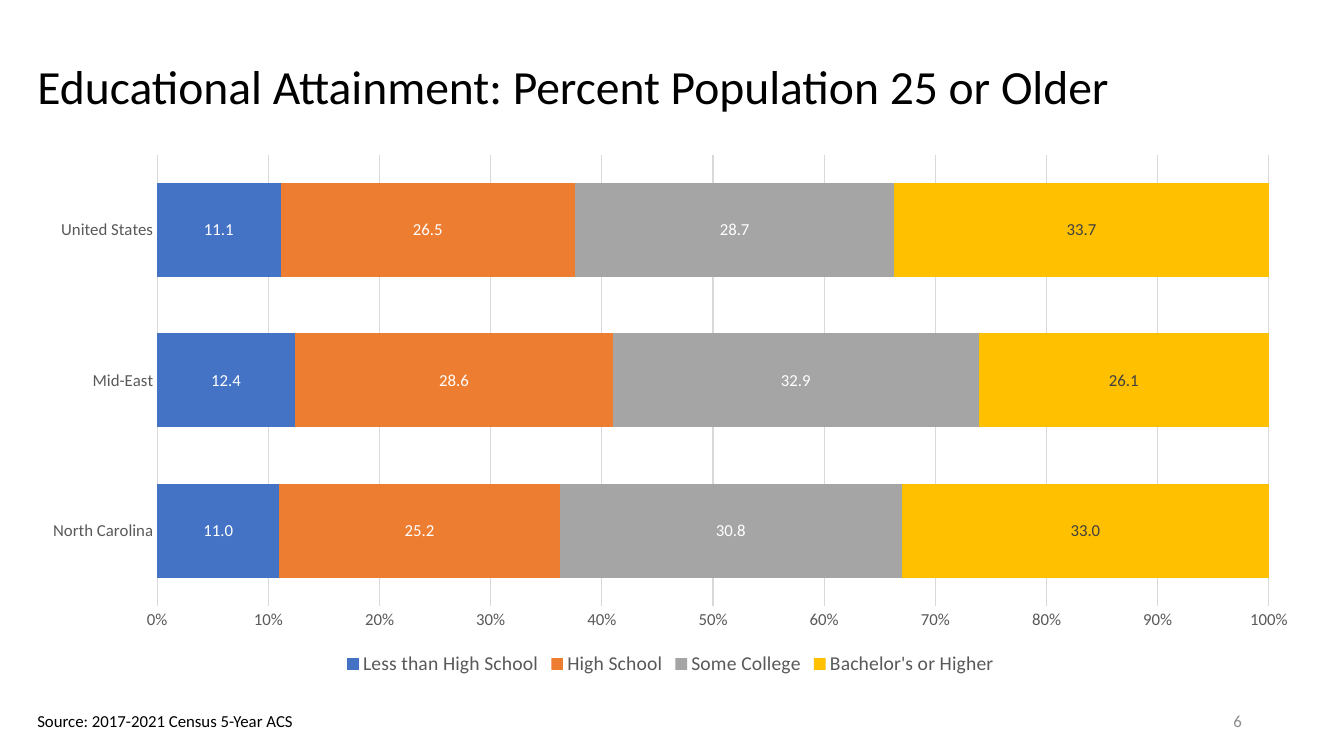
"""Build the educational attainment slide with its stacked percentage chart."""
from dataclasses import dataclass

from lxml import etree
from pptx import Presentation
from pptx import util as u
from pptx.chart import data as chart_data
from pptx.dml.color import RGBColor
from pptx.enum import chart as charts, text

FONT = "Calibri"
BLACK = RGBColor(0x00, 0x00, 0x00)
WHITE = RGBColor(0xFF, 0xFF, 0xFF)
CHARCOAL = RGBColor(0x40, 0x40, 0x40)
AXIS_GREY = RGBColor(0x59, 0x59, 0x59)
NUMBER_GREY = RGBColor(0x8C, 0x8C, 0x8C)
GRID_GREY = RGBColor(0xD9, 0xD9, 0xD9)
BLUE = RGBColor(0x44, 0x72, 0xC4)
ORANGE = RGBColor(0xED, 0x7D, 0x31)
GREY = RGBColor(0xA5, 0xA5, 0xA5)
GOLD = RGBColor(0xFF, 0xC0, 0x00)
VALUE_FORMAT = "#,##0.0"


@dataclass(frozen=True)
class Level:
    name: str
    values: tuple[float, ...]
    fill: RGBColor
    label: RGBColor = WHITE


@dataclass(frozen=True)
class Note:
    wording: str
    left: float
    top: float
    width: float
    height: float
    color: RGBColor
    align: text.PP_ALIGN
    anchor: text.MSO_ANCHOR
    wrap: bool


REGIONS = ("North Carolina", "Mid-East", "United States")
LEVELS = (
    Level("Less than High School", (11.0, 12.4, 11.1), BLUE),
    Level("High School", (25.2, 28.6, 26.5), ORANGE),
    Level("Some College", (30.8, 32.9, 28.7), GREY),
    Level("Bachelor's or Higher", (33.0, 26.1, 33.7), GOLD, CHARCOAL),
)
NOTES = (
    Note("6", 23.93, 17.65, 7.62, 1.02, NUMBER_GREY,
         text.PP_ALIGN.RIGHT, text.MSO_ANCHOR.MIDDLE, True),
    Note("Source: 2017-2021 Census 5-Year ACS", 0.69, 17.78, 7.06, 0.77, BLACK,
         text.PP_ALIGN.LEFT, text.MSO_ANCHOR.TOP, False),
)


def style_font(font, size: float, color: RGBColor) -> None:
    """Apply the slide's typeface with a size and colour."""
    font.name = FONT
    font.size = u.Pt(size)
    font.color.rgb = color


def place(shape, left: float, top: float, width: float, height: float) -> None:
    """Position a shape in centimetres."""
    shape.left, shape.top = u.Cm(left), u.Cm(top)
    shape.width, shape.height = u.Cm(width), u.Cm(height)


def add_title(page, wording: str) -> None:
    """Fill and format the title placeholder."""
    title = page.shapes.title
    place(title, 0.69, 0.86, 32.41, 2.77)
    frame = title.text_frame
    frame.text = wording
    frame.word_wrap = True
    frame.vertical_anchor = text.MSO_ANCHOR.MIDDLE
    para = frame.paragraphs[0]
    para.alignment = text.PP_ALIGN.LEFT
    para.line_spacing = 0.9
    style_font(para.runs[0].font, 34, BLACK)


def add_note(page, note: Note) -> None:
    """Add one small text box."""
    box = page.shapes.add_textbox(u.Cm(note.left), u.Cm(note.top),
                                  u.Cm(note.width), u.Cm(note.height))
    frame = box.text_frame
    frame.text = note.wording
    frame.word_wrap = note.wrap
    frame.vertical_anchor = note.anchor
    para = frame.paragraphs[0]
    para.alignment = note.align
    style_font(para.runs[0].font, 12, note.color)


def style_line(line) -> None:
    """Give an axis or grid line its thin grey stroke."""
    line.color.rgb = GRID_GREY
    line.width = u.Pt(0.75)


def style_axes(chart) -> None:
    """Format both axes and the vertical gridlines."""
    for axis in (chart.category_axis, chart.value_axis):
        axis.major_tick_mark = charts.XL_TICK_MARK.NONE
        axis.minor_tick_mark = charts.XL_TICK_MARK.NONE
        style_font(axis.tick_labels.font, 12, AXIS_GREY)
    style_line(chart.category_axis.format.line)
    values = chart.value_axis
    values.format.line.fill.background()
    values.has_major_gridlines = True
    style_line(values.major_gridlines.format.line)
    values.tick_labels.number_format = "0%"
    values.tick_labels.number_format_is_linked = False


def style_series(series, level: Level) -> None:
    """Colour one series and show its values."""
    series.format.fill.solid()
    series.format.fill.fore_color.rgb = level.fill
    series.invert_if_negative = False
    labels = series.data_labels
    labels.show_value = True
    labels.number_format = VALUE_FORMAT
    labels.number_format_is_linked = False
    labels.position = charts.XL_LABEL_POSITION.CENTER
    style_font(labels.font, 12, level.label)


def add_attainment_chart(page) -> None:
    """Add the stacked percentage bars."""
    table = chart_data.CategoryChartData(number_format=VALUE_FORMAT)
    table.categories = REGIONS
    for level in LEVELS:
        table.add_series(level.name, level.values)
    chart = page.shapes.add_chart(
        charts.XL_CHART_TYPE.BAR_STACKED_100,
        u.Cm(0.69), u.Cm(3.63), u.Cm(32.41), u.Cm(13.51), table).chart
    style_font(chart.font, 10, BLACK)
    chart.has_title = False
    chart.has_legend = True
    chart.legend.position = charts.XL_LEGEND_POSITION.BOTTOM
    chart.legend.include_in_layout = False
    style_font(chart.legend.font, 14, AXIS_GREY)
    plot = chart.plots[0]
    plot.gap_width = 60
    plot.overlap = 100
    plot.vary_by_categories = False
    style_axes(chart)
    for series, level in zip(plot.series, LEVELS):
        style_series(series, level)


def main() -> None:
    """Create and save the deck."""
    deck = Presentation()
    deck.slide_width, deck.slide_height = u.Cm(33.87), u.Cm(19.05)
    page = deck.slides.add_slide(deck.slide_layouts[5])
    add_title(page, "Educational Attainment: Percent Population 25 or Older")
    add_attainment_chart(page)
    for note in NOTES:
        add_note(page, note)
    deck.save("out.pptx")


if __name__ == "__main__":
    main()
